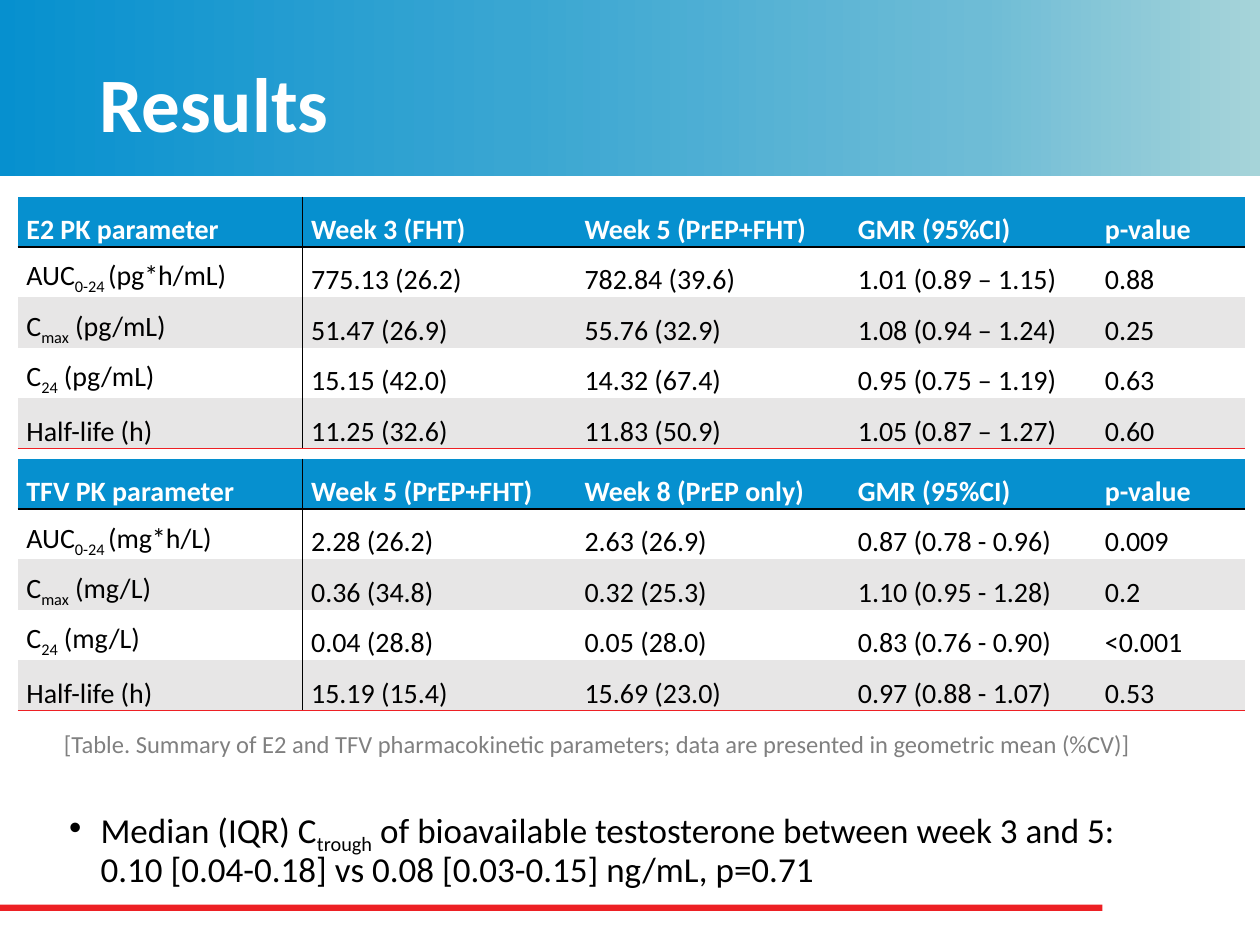
from copy import deepcopy

from lxml.etree import SubElement
from pptx import Presentation
from pptx.dml.color import RGBColor
from pptx.enum.shapes import MSO_SHAPE as Shape
from pptx.enum.text import MSO_ANCHOR as Anchor
from pptx.oxml.ns import qn
from pptx.util import Inches, Pt

BLUE = RGBColor(0x06, 0x90, 0xCF)
RED = RGBColor(0xED, 0x20, 0x24)
BLACK = RGBColor(0, 0, 0)
WHITE = RGBColor(0xFF, 0xFF, 0xFF)
BAND = RGBColor(0xE7, 0xE6, 0xE6)
GREY = RGBColor(0x80, 0x80, 0x80)
BANNER_STOPS = [
    (0, RGBColor(0xA6, 0xD4, 0xD9)),
    (0.22, RGBColor(0x6E, 0xBC, 0xD6)),
    (0.59, RGBColor(0x39, 0xA6, 0xD2)),
    (1, BLUE),
]

COLUMN_WIDTHS = [2.26, 2.17, 2.17, 1.96, 1.18]
ROW_HEIGHT = 0.4
SUBSCRIPT_MARK = "~"

ESTRADIOL_ROWS = [
    ["E2 PK parameter", "Week 3 (FHT)", "Week 5 (PrEP+FHT)", "GMR (95%CI)", "p-value"],
    ["AUC~0-24 ~(pg*h/mL)", "775.13 (26.2)", "782.84 (39.6)", "1.01 (0.89 – 1.15)", "0.88"],
    ["C~max~ (pg/mL)", "51.47 (26.9)", "55.76 (32.9)", "1.08 (0.94 – 1.24)", "0.25"],
    ["C~24~ (pg/mL)", "15.15 (42.0)", "14.32 (67.4)", "0.95 (0.75 – 1.19)", "0.63"],
    ["Half-life (h)", "11.25 (32.6)", "11.83 (50.9)", "1.05 (0.87 – 1.27)", "0.60"],
]
TENOFOVIR_ROWS = [
    ["TFV PK parameter", "Week 5 (PrEP+FHT)", "Week 8 (PrEP only)", "GMR (95%CI)", "p-value"],
    ["AUC~0-24 ~(mg*h/L)", "2.28 (26.2)", "2.63 (26.9)", "0.87 (0.78 - 0.96)", "0.009"],
    ["C~max~ (mg/L)", "0.36 (34.8)", "0.32 (25.3)", "1.10 (0.95 - 1.28)", "0.2"],
    ["C~24~ (mg/L)", "0.04 (28.8)", "0.05 (28.0)", "0.83 (0.76 - 0.90)", "<0.001"],
    ["Half-life (h)", "15.19 (15.4)", "15.69 (23.0)", "0.97 (0.88 - 1.07)", "0.53"],
]


def add_runs(paragraph, text, size, color, bold=False):
    for index, part in enumerate(text.split(SUBSCRIPT_MARK)):
        run = paragraph.add_run()
        run.text = part
        run.font.name = "Calibri"
        run.font.size = Pt(size)
        run.font.bold = bold
        run.font.color.rgb = color
        if index % 2:
            run._r.get_or_add_rPr().set("baseline", "-25000")


def add_bar(slide, left, top, width, height):
    bar = slide.shapes.add_shape(
        Shape.RECTANGLE, Inches(left), Inches(top), Inches(width), Inches(height))
    bar.shadow.inherit = False
    bar.line.fill.background()
    return bar


def add_text_frame(slide, left, top, width, height):
    frame = slide.shapes.add_textbox(
        Inches(left), Inches(top), Inches(width), Inches(height)).text_frame
    frame.word_wrap = True
    return frame


def add_banner(slide, left, top, width, height):
    banner = add_bar(slide, left, top, width, height)
    banner.fill.gradient()
    banner.fill.gradient_angle = 180
    stop_list = banner._element.spPr.find(qn("a:gradFill")).find(qn("a:gsLst"))
    while len(stop_list) < len(BANNER_STOPS):
        stop_list.append(deepcopy(stop_list[0]))
    for stop, (position, color) in zip(banner.fill.gradient_stops, BANNER_STOPS):
        stop.position = position
        stop.color.rgb = color


def add_footer_rule(slide, left, top, width, height):
    rule = add_bar(slide, left, top, width, height)
    rule.fill.solid()
    rule.fill.fore_color.rgb = RED


def add_title(slide, left, top, width, height):
    frame = add_text_frame(slide, left, top, width, height)
    frame.vertical_anchor = Anchor.MIDDLE
    frame.paragraphs[0].line_spacing = 0.9
    add_runs(frame.paragraphs[0], "Results", 44, WHITE, bold=True)


def set_borders(cell, colors):
    properties = cell._tc.get_or_add_tcPr()
    for side in "LRTB":
        border = SubElement(properties, qn(f"a:ln{side}"), w=str(Pt(1)))
        if side in colors:
            fill = SubElement(border, qn("a:solidFill"))
            SubElement(fill, qn("a:srgbClr"), val=str(colors[side]))
        else:
            SubElement(border, qn("a:noFill"))


def cell_borders(row, column, last_row):
    colors = {}
    if column == 0:
        colors["R"] = BLACK
    if column == 1:
        colors["L"] = BLACK
    if row == 0:
        colors["B"] = BLACK
    if row == 1:
        colors["T"] = BLACK
    if row == last_row:
        colors["B"] = RED
    return colors


def fill_cell(cell, row):
    if row % 2:
        cell.fill.background()
    else:
        cell.fill.solid()
        cell.fill.fore_color.rgb = BAND if row else BLUE


def add_parameter_table(slide, left, top, rows):
    table = slide.shapes.add_table(
        len(rows), len(COLUMN_WIDTHS), Inches(left), Inches(top),
        Inches(sum(COLUMN_WIDTHS)), Inches(ROW_HEIGHT * len(rows))).table
    table.first_row = table.horz_banding = False
    for column, width in zip(table.columns, COLUMN_WIDTHS):
        column.width = Inches(width)
    for row, values in enumerate(rows):
        for column, value in enumerate(values):
            cell = table.cell(row, column)
            cell.vertical_anchor = Anchor.BOTTOM
            cell.margin_left = cell.margin_right = Inches(0.07)
            cell.margin_top, cell.margin_bottom = Inches(0.01), 0
            set_borders(cell, cell_borders(row, column, len(rows) - 1))
            fill_cell(cell, row)
            paragraph = cell.text_frame.paragraphs[0]
            paragraph.line_spacing = 1.07
            paragraph.space_after = Pt(8)
            add_runs(paragraph, value, 16, BLACK if row else WHITE, bold=row == 0)


def add_caption(slide, left, top, width, height):
    frame = add_text_frame(slide, left, top, width, height)
    add_runs(
        frame.paragraphs[0],
        "[Table. Summary of E2 and TFV pharmacokinetic parameters; "
        "data are presented in geometric mean (%CV)]",
        14, GREY)


def add_testosterone_bullet(slide, left, top, width, height):
    paragraph = add_text_frame(slide, left, top, width, height).paragraphs[0]
    properties = paragraph._p.get_or_add_pPr()
    properties.set("marL", str(Inches(0.25)))
    properties.set("indent", str(Inches(-0.25)))
    SubElement(properties, qn("a:buFont"), typeface="Arial")
    SubElement(properties, qn("a:buChar"), char="•")
    paragraph.line_spacing = 0.9
    add_runs(
        paragraph,
        "Median (IQR) C~trough~ of bioavailable testosterone between week 3 and 5:",
        20, BLACK)
    paragraph.add_line_break()
    add_runs(paragraph, "0.10 [0.04-0.18] vs 0.08 [0.03-0.15] ng/mL, p=0.71", 20, BLACK)


def main():
    presentation = Presentation()
    presentation.slide_width, presentation.slide_height = Inches(10), Inches(7.5)
    slide = presentation.slides.add_slide(presentation.slide_layouts[6])
    add_banner(slide, -0.04, 0, 10.04, 1.4)
    add_footer_rule(slide, 0, 7.18, 8.75, 0.05)
    add_title(slide, 0.69, 0.31, 8.62, 1.08)
    add_testosterone_bullet(slide, 0.45, 6.37, 9.24, 0.72)
    add_parameter_table(slide, 0.14, 1.56, ESTRADIOL_ROWS)
    add_parameter_table(slide, 0.14, 3.64, TENOFOVIR_ROWS)
    add_caption(slide, 0.41, 5.74, 9.37, 0.34)
    presentation.save("out.pptx")


if __name__ == "__main__":
    main()
